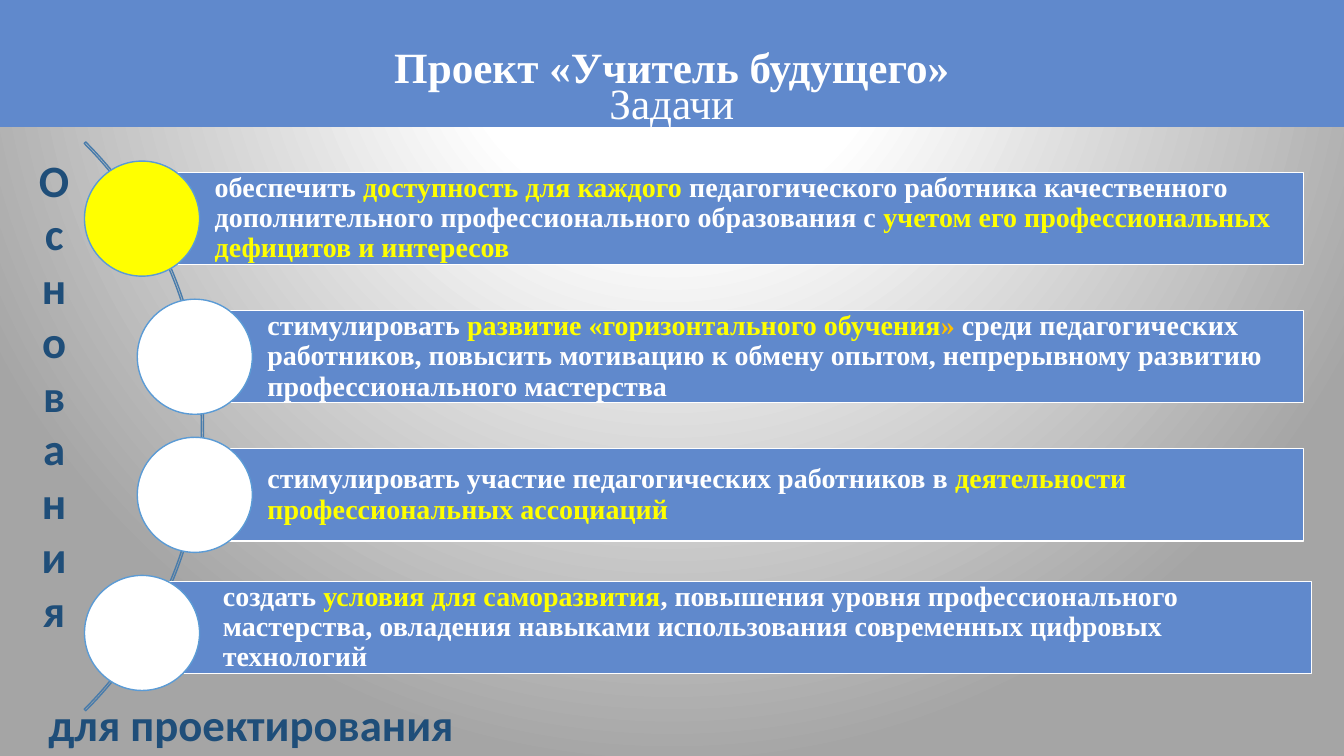
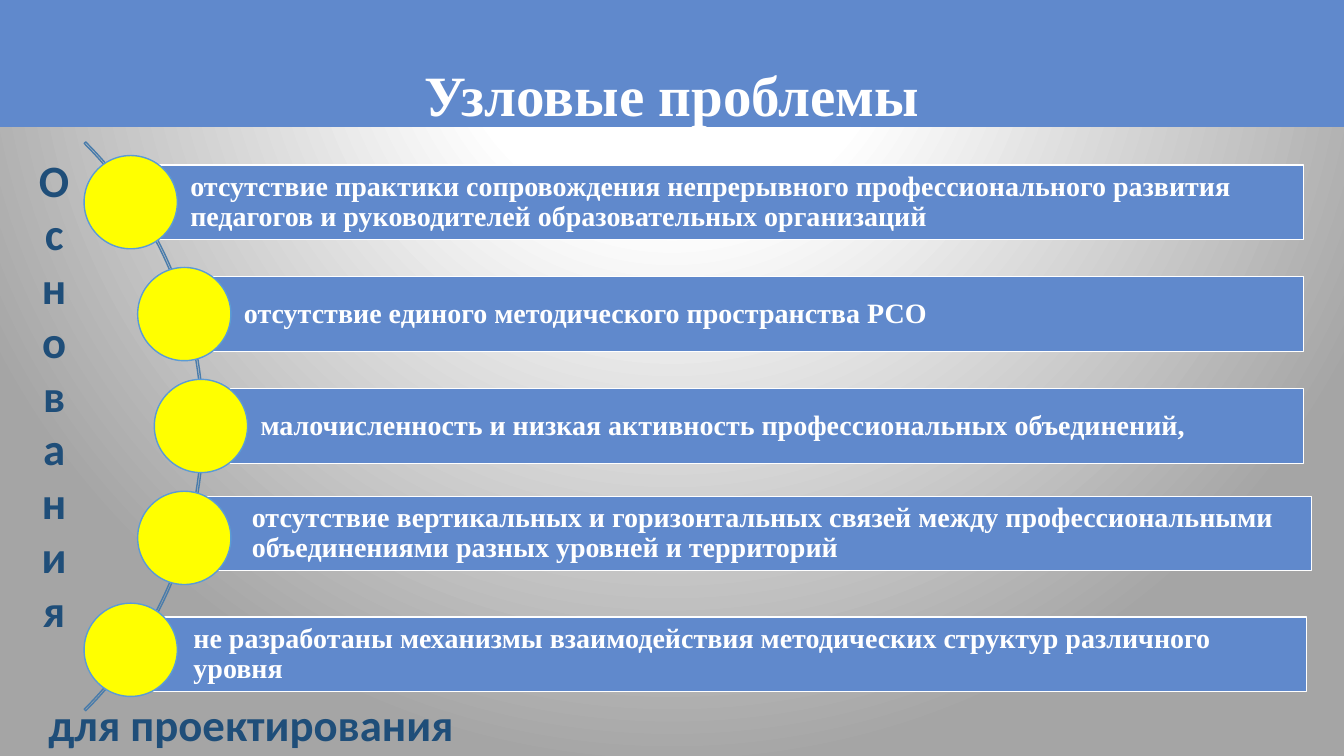
from pptx import Presentation
from pptx.dml.color import RGBColor
from pptx.enum.shapes import MSO_SHAPE as SHAPE
from pptx.enum.text import MSO_ANCHOR as ANCHOR, MSO_AUTO_SIZE as AUTO, PP_ALIGN as ALIGN
from pptx.oxml import parse_xml
from pptx.util import Cm, Pt

BLUE = RGBColor(0x60, 0x89, 0xCC)
ARC_BLUE = RGBColor(0x49, 0x7C, 0xAB)
RING_BLUE = RGBColor(0x5B, 0x9B, 0xD5)
NAVY = RGBColor(0x1F, 0x4E, 0x79)
WHITE = RGBColor(0xFF, 0xFF, 0xFF)
YELLOW = RGBColor(0xFF, 0xFF, 0x00)
AMBER = RGBColor(0xFF, 0xC0, 0x00)
SERIF, SANS = "Times New Roman", "Calibri"
WIDTH, HEIGHT, BAND_HEIGHT = 33.87, 19.05, 3.2
BAR_RIGHT = 32.85

BACKGROUND = """<p:bg xmlns:p="http://schemas.openxmlformats.org/presentationml/2006/main"
 xmlns:a="http://schemas.openxmlformats.org/drawingml/2006/main"><p:bgPr>
<a:gradFill rotWithShape="1"><a:gsLst>
<a:gs pos="0"><a:srgbClr val="FFFFFF"/></a:gs>
<a:gs pos="28000"><a:srgbClr val="FFFFFF"/></a:gs>
<a:gs pos="100000"><a:srgbClr val="A5A5A5"/></a:gs></a:gsLst>
<a:path path="circle"><a:fillToRect l="50000" t="-80000" r="50000" b="180000"/></a:path>
</a:gradFill><a:effectLst/></p:bgPr></p:bg>"""

# Each row: circle left, circle colour, bar shift (x, y), text runs
SLIDES = [
    dict(
        title=[("Проект «Учитель будущего»", True), (" Задачи ", False)],
        title_size=30.8, title_spacing=0.7,
        top=4.06, step=3.48, circle=2.9, bar=2.32, indent=1.83,
        rows=[
            (2.13, YELLOW, (0, 0), [
                ("обеспечить ", WHITE), ("доступность для каждого ", YELLOW),
                ("педагогического работника качественного дополнительного "
                 "профессионального образования с ", WHITE),
                ("учетом его профессиональных дефицитов и интересов", YELLOW)]),
            (3.46, WHITE, (0, 0), [
                ("стимулировать ", WHITE),
                ("развитие «горизонтального обучения", YELLOW), ("»", AMBER),
                (" среди педагогических работников, повысить мотивацию к обмену "
                 "опытом, непрерывному развитию профессионального мастерства", WHITE)]),
            (3.46, WHITE, (0, 0), [
                ("стимулировать участие педагогических работников в ", WHITE),
                ("деятельности профессиональных ассоциаций", YELLOW)]),
            (2.13, WHITE, (0.21, -0.14), [
                ("создать ", WHITE), ("условия для саморазвития", YELLOW),
                (", повышения уровня профессионального мастерства, овладения "
                 "навыками использования современных цифровых технологий", WHITE)]),
        ]),
    dict(
        title=[("Узловые проблемы", True)],
        title_size=40.7, title_spacing=0.8,
        top=3.92, step=2.82, circle=2.35, bar=1.88, indent=1.5,
        rows=[
            (2.12, YELLOW, (0, 0), [
                ("отсутствие практики сопровождения непрерывного профессионального "
                 "развития педагогов и руководителей образовательных организаций", WHITE)]),
            (3.47, YELLOW, (0, 0), [
                ("отсутствие единого методического пространства РСО", WHITE)]),
            (3.89, YELLOW, (0, 0), [
                ("малочисленность и низкая активность профессиональных объединений,", WHITE)]),
            (3.47, YELLOW, (0.2, -0.11), [
                ("отсутствие вертикальных и горизонтальных связей между "
                 "профессиональными объединениями разных уровней и территорий", WHITE)]),
            (2.12, YELLOW, (0.08, 0.11), [
                ("не разработаны механизмы взаимодействия методических структур "
                 "различного уровня", WHITE)]),
        ]),
]


def add_shape(s, kind, x, y, w, h, fill=None, line=None):
    sp = s.shapes.add_shape(kind, Cm(x), Cm(y), Cm(w), Cm(h))
    sp.shadow.inherit = False
    if fill is None:
        sp.fill.background()
    else:
        sp.fill.solid()
        sp.fill.fore_color.rgb = fill
    if line is None:
        sp.line.fill.background()
    else:
        sp.line.color.rgb = line
        sp.line.width = Pt(1)
    return sp


def set_font(p, name, size, color, bold=True):
    p.font.name, p.font.size, p.font.bold = name, Pt(size), bold
    p.font.color.rgb = color


prs = Presentation()
prs.slide_width, prs.slide_height = Cm(WIDTH), Cm(HEIGHT)

for d in SLIDES:
    s = prs.slides.add_slide(prs.slide_layouts[6])
    s.element.cSld.insert(0, parse_xml(BACKGROUND))

    # Title band
    tf = add_shape(s, SHAPE.RECTANGLE, 0, 0, WIDTH, BAND_HEIGHT, BLUE).text_frame
    tf.word_wrap = True
    tf.vertical_anchor = ANCHOR.BOTTOM
    tf.margin_bottom = 0
    for i, (text, bold) in enumerate(d["title"]):
        p = tf.add_paragraph() if i else tf.paragraphs[0]
        p.text = text
        p.alignment = ALIGN.CENTER
        p.line_spacing = d["title_spacing"]
        set_font(p, SERIF, d["title_size"], WHITE, bold)

    # Arc behind the rows
    arc = add_shape(s, SHAPE.BLOCK_ARC, -15.14, 0.61, 20.27, 20.27, line=ARC_BLUE)
    for i, value in enumerate((189, 27, 0.0027)):
        arc.adjustments[i] = value

    # Rows: each bar starts at the centre of its circle
    size = d["circle"]
    for i, (left, color, (dx, dy), runs) in enumerate(d["rows"]):
        y = d["top"] + i * d["step"]
        x = left + size / 2
        bar = add_shape(s, SHAPE.RECTANGLE, x + dx, y + (size - d["bar"]) / 2 + dy,
                        BAR_RIGHT - x, d["bar"], BLUE, WHITE)
        tf = bar.text_frame
        tf.word_wrap = True
        tf.vertical_anchor = ANCHOR.MIDDLE
        tf.margin_left = Cm(d["indent"])
        tf.margin_right = tf.margin_top = tf.margin_bottom = Cm(0.15)
        p = tf.paragraphs[0]
        p.alignment = ALIGN.LEFT
        p.line_spacing = 0.9
        set_font(p, SERIF, 20, WHITE)
        for text, run_color in runs:
            r = p.add_run()
            r.text = text
            r.font.color.rgb = run_color
        add_shape(s, SHAPE.OVAL, left, y, size, size, color, RING_BLUE)

    # Side and bottom captions
    for text, box, align, vert in (
            ("Основания", (0.3, 2.01, 2.13, 15.85), ALIGN.CENTER, "wordArtVert"),
            ("для проектирования", (0.97, 17.42, 17.17, 1.63), ALIGN.LEFT, "horz")):
        tf = s.shapes.add_textbox(*map(Cm, box)).text_frame
        tf.word_wrap = True
        tf.auto_size = AUTO.SHAPE_TO_FIT_TEXT
        tf._txBody.bodyPr.set("vert", vert)
        p = tf.paragraphs[0]
        p.text = text
        p.alignment = align
        set_font(p, SANS, 32, NAVY)

prs.save("out.pptx")
